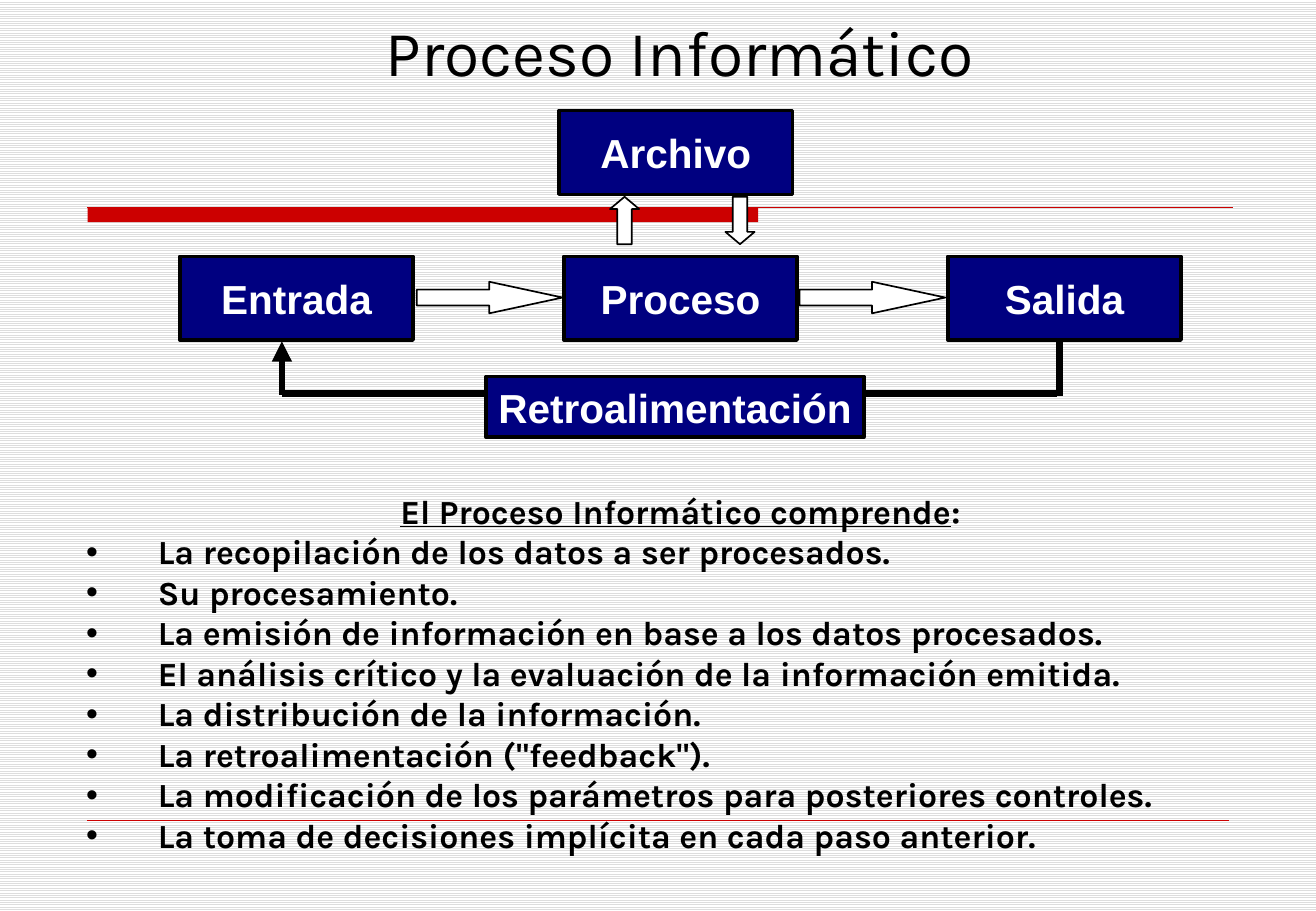
from dataclasses import dataclass
from typing import Any

from lxml.etree import SubElement
from pptx import Presentation
from pptx.dml.color import RGBColor
from pptx.enum.dml import MSO_PATTERN
from pptx.enum.shapes import MSO_CONNECTOR, MSO_SHAPE
from pptx.enum.text import MSO_ANCHOR, MSO_AUTO_SIZE, PP_ALIGN
from pptx.oxml.ns import qn
from pptx.util import Inches, Pt

HUES = {"ink": "000000", "paper": "FFFFFF", "navy": "000080", "red": "CC0000", "stripe": "DDDDDD"}
TITLE = {"name": "Karla", "size": Pt(38), "bold": False}
LABEL = {"name": "Arial", "size": Pt(24), "bold": True}
BODY = {"name": "Karla", "size": Pt(20), "bold": True}
FRAME = {"word_wrap": True, "vertical_anchor": MSO_ANCHOR.MIDDLE, "auto_size": MSO_AUTO_SIZE.NONE}
TIGHT = FRAME | {"word_wrap": False}
GROW = {"word_wrap": True, "auto_size": MSO_AUTO_SIZE.SHAPE_TO_FIT_TEXT}
WIDE, TALL = 1.92, 0.69
ROW = 2.11
HANG = 0.59


@dataclass
class Box:
    text: str
    left: float
    top: float
    width: float = WIDE
    height: float = TALL


@dataclass
class Arrow:
    kind: MSO_SHAPE
    left: float
    top: float
    width: float
    height: float
    head: float


@dataclass
class Line:
    start: tuple[float, float]
    end: tuple[float, float]
    width: float = 4
    hue: str = "ink"
    tip: bool = False


BOXES = [
    Box("Entrada", 1.48, ROW),
    Box("Salida", 7.8, ROW),
    Box("Proceso", 4.64, ROW),
    Box("Retroalimentación", 4, 3.1, 3.11, 0.5),
    Box("Archivo", 4.6, 0.91),
]
ARROWS = [
    Arrow(MSO_SHAPE.RIGHT_ARROW, 3.43, 2.32, 1.2, 0.26, 2.32),
    Arrow(MSO_SHAPE.RIGHT_ARROW, 6.58, 2.32, 1.2, 0.26, 2.32),
    Arrow(MSO_SHAPE.UP_ARROW, 5.02, 1.62, 0.24, 0.39, 0.42),
    Arrow(MSO_SHAPE.DOWN_ARROW, 5.97, 1.62, 0.24, 0.39, 0.42),
]
LINES = [
    Line((0.72, 1.71), (10.15, 1.71), 0.75, "red"),
    Line((0.72, 6.75), (10.11, 6.75), 0.25, "red"),
    Line((2.32, 3.25), (2.32, 2.81), tip=True),
    Line((2.32, 3.24), (4.46, 3.24)),
    Line((6.56, 3.24), (8.7, 3.24)),
    Line((8.72, 3.26), (8.72, 2.78)),
]
HEADING = "El Proceso Informático comprende"
STEPS = [
    "La recopilación de los datos a ser procesados.",
    "Su procesamiento.",
    "La emisión de información en base a los datos procesados.",
    "El análisis crítico y la evaluación de la información emitida.",
    "La distribución de la información.",
    'La retroalimentación ("feedback").',
    "La modificación de los parámetros para posteriores controles.",
    "La toma de decisiones implícita en cada paso anterior.",
]


def color(hue: str) -> RGBColor:
    return RGBColor.from_string(HUES[hue])


def apply(target: Any, values: dict[str, Any]) -> None:
    for name, value in values.items():
        setattr(target, name, value)


def place(shape: Any, *sides: float) -> None:
    apply(shape, dict(zip(("left", "top", "width", "height"), map(Inches, sides))))


def write(para: Any, text: str, style: dict[str, Any], hue: str = "ink") -> Any:
    run = para.add_run()
    run.text = text
    apply(run.font, style)
    run.font.color.rgb = color(hue)
    return run


def add_block(slide: Any, kind: MSO_SHAPE, sides: tuple[float, ...], hue: str, edge: float) -> Any:
    shape = slide.shapes.add_shape(kind, *map(Inches, sides))
    shape.shadow.inherit = False
    shape.fill.solid()
    shape.fill.fore_color.rgb = color(hue)
    if edge:
        shape.line.color.rgb = color("ink")
        shape.line.width = Pt(edge)
    else:
        shape.line.fill.background()
    return shape


def add_box(slide: Any, box: Box) -> None:
    sides = (box.left, box.top, box.width, box.height)
    frame = add_block(slide, MSO_SHAPE.RECTANGLE, sides, "navy", 2).text_frame
    apply(frame, TIGHT)
    para = frame.paragraphs[0]
    para.alignment = PP_ALIGN.CENTER
    write(para, box.text, LABEL, "paper")


def add_arrow(slide: Any, arrow: Arrow) -> None:
    sides = (arrow.left, arrow.top, arrow.width, arrow.height)
    shape = add_block(slide, arrow.kind, sides, "paper", 1)
    shape.adjustments[0] = 0.5
    shape.adjustments[1] = arrow.head


def add_line(slide: Any, line: Line) -> None:
    ends = map(Inches, (*line.start, *line.end))
    link = slide.shapes.add_connector(MSO_CONNECTOR.STRAIGHT, *ends)
    link.line.color.rgb = color(line.hue)
    link.line.width = Pt(line.width)
    props = link._element.spPr
    if line.tip:
        SubElement(props.find(qn("a:ln")), qn("a:tailEnd"), type="triangle")
    SubElement(props, qn("a:effectLst"))


def add_title(slide: Any) -> None:
    title = slide.shapes.title
    place(title, 0.99, -0.19, 9.21, 1.21)
    apply(title.text_frame, FRAME)
    para = title.text_frame.paragraphs[0]
    para.alignment = PP_ALIGN.CENTER
    write(para, "Proceso Informático", TITLE)


def add_list(slide: Any) -> None:
    frame = slide.shapes.add_textbox(*map(Inches, (0.61, 3.99, 9.98, 3.1))).text_frame
    apply(frame, GROW)
    head = frame.paragraphs[0]
    head.alignment = PP_ALIGN.CENTER
    write(head, HEADING, BODY | {"underline": True})
    write(head, ":", BODY)
    for step in STEPS:
        para = frame.add_paragraph()
        write(para, step, BODY)
        props = para._p.get_or_add_pPr()
        props.set("marL", str(Inches(HANG)))
        props.set("indent", str(-Inches(HANG)))
        SubElement(props, qn("a:buFont"), typeface="Arial")
        SubElement(props, qn("a:buChar"), char="•")


def main() -> None:
    deck = Presentation()
    apply(deck, {"slide_width": Inches(10.83), "slide_height": Inches(7.5)})
    slide = deck.slides.add_slide(deck.slide_layouts[5])
    back = slide.background.fill
    back.patterned()
    back.pattern = MSO_PATTERN.LIGHT_HORIZONTAL
    back.fore_color.rgb = color("stripe")
    back.back_color.rgb = color("paper")
    add_title(slide)
    add_block(slide, MSO_SHAPE.RECTANGLE, (0.72, 1.71, 5.52, 0.12), "red", 0)
    for line in LINES:
        add_line(slide, line)
    for box in BOXES:
        add_box(slide, box)
    for arrow in ARROWS:
        add_arrow(slide, arrow)
    add_list(slide)
    deck.save("out.pptx")


if __name__ == "__main__":
    main()
